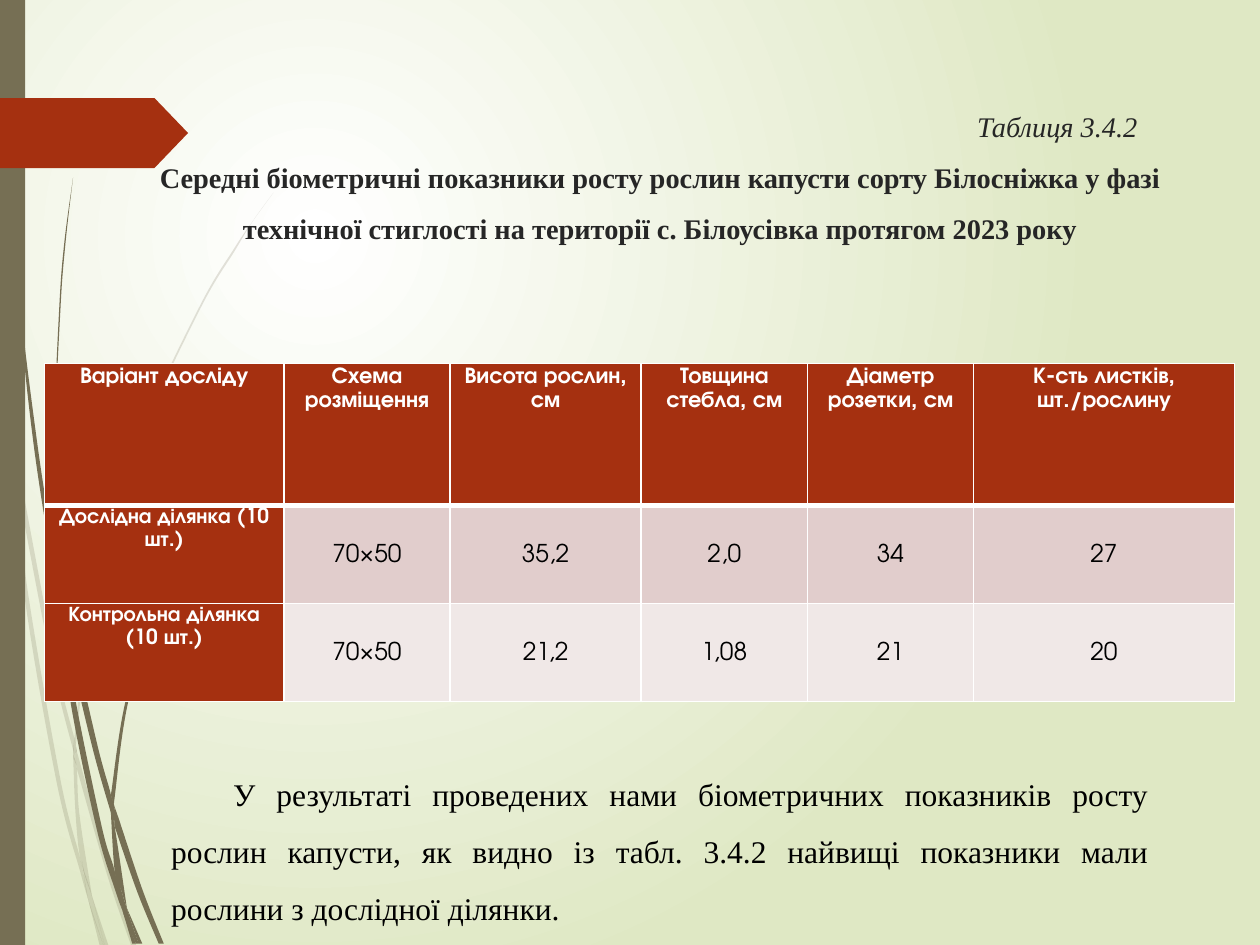
import pptx
import pptx.dml.color
import pptx.enum.lang
import pptx.enum.shapes
import pptx.enum.text
import pptx.oxml
import pptx.oxml.ns
import pptx.util

Pt = pptx.util.Pt
qn = pptx.oxml.ns.qn
ALIGN = pptx.enum.text.PP_ALIGN
ANCHOR = pptx.enum.text.MSO_ANCHOR
AUTO_SIZE = pptx.enum.text.MSO_AUTO_SIZE
SHAPE = pptx.enum.shapes.MSO_SHAPE
UKRAINIAN = pptx.enum.lang.MSO_LANGUAGE_ID.UKRAINIAN
NAMESPACE = pptx.oxml.ns.nsdecls("a")

SERIF, SANS = "Times New Roman", "TeX Gyre Adventor"
OLIVE, RUST, WHITE, BLACK, DARK = "766F54", "A53010", "FFFFFF", "000000", "262626"
GRID = 0.72

PALE_BLADES = [
    ([(0, 282), (6, 322), (8, 350)], [(8, 350), (7, 344), (0, 299)]),
    ([(10, 345), (43, 520), (59, 586)], [(59, 599), (40, 522), (12, 376)]),
    ([(61, 596), (64, 607), (88, 692), (108, 750)], [(104, 750), (85, 694), (61, 610)]),
    ([(73, 711), (86, 750)], [(83, 750), (73, 711)]),
    ([(8, 350), (12, 376), (22, 469), (48, 619), (64, 683), (70, 714)],
     [(70, 714), (64, 693), (45, 621), (19, 470), (8, 350)]),
    ([(58, 599), (60, 646), (64, 683), (73, 711)], [(73, 711), (63, 646), (61, 610), (58, 599)]),
    ([(217, 153), (201, 175), (187, 198), (159, 245), (111, 349), (76, 462), (61, 584), (61, 596)],
     [(59, 586), (75, 461), (110, 348), (158, 244), (186, 197), (201, 175), (217, 153)]),
    ([(70, 714), (82, 750)], [(79, 750), (70, 714)]),
    ([(59, 586), (61, 596), (61, 610)], [(61, 608), (58, 599), (59, 586)]),
    ([(65, 683), (67, 692), (73, 711), (83, 750)], [(82, 750), (70, 714), (65, 683)]),
]
DARK_BLADES = [
    ([(2, 0), (3, 48), (5, 110), (14, 233), (27, 355), (46, 477), (47, 481)],
     [(47, 481), (45, 453), (30, 355), (15, 232), (6, 109), (4, 48), (3, 0)]),
    ([(50, 472), (77, 590), (88, 631), (88, 645)], [(88, 645), (73, 592), (53, 505), (50, 472)]),
    ([(91, 641), (94, 649), (113, 706), (130, 749)], [(126, 749), (109, 708), (91, 656)]),
    ([(47, 477), (53, 505), (60, 556), (81, 657), (91, 691), (97, 722)],
     [(97, 722), (92, 708), (77, 659), (56, 557), (47, 477)]),
    ([(58, 141), (52, 193), (48, 245), (44, 349), (48, 453), (50, 472)],
     [(49, 472), (45, 449), (43, 349), (47, 245), (51, 193), (58, 141)]),
    ([(100, 719), (113, 749)], [(110, 749), (100, 719)]),
    ([(45, 449), (49, 472), (50, 472), (53, 505)], [(47, 477), (45, 453)]),
    ([(216, 344), (203, 359), (191, 374), (169, 406), (131, 476), (103, 552), (91, 633), (91, 641)],
     [(88, 631), (101, 551), (129, 474), (168, 405), (191, 373), (203, 358), (215, 344)]),
    ([(97, 722), (108, 749)], [(105, 749), (97, 722)]),
    ([(88, 645), (91, 656), (100, 716), (100, 719)], [(96, 706), (91, 691), (88, 645)]),
    ([(88, 631), (91, 641), (91, 656)], [(90, 651), (88, 645)]),
    ([(91, 691), (96, 706), (100, 719), (110, 749)], [(108, 749), (97, 722), (91, 691)]),
]

HEADER = ["Варіант досліду", "Схема розміщення", "Висота рослин, см",
          "Товщина стебла, см", "Діаметр розетки, см", "К-сть листків, шт./рослину"]
PLOTS = [
    ["Дослідна ділянка (10 шт.)", "70×50", "35,2", "2,0", "34", "27"],
    ["Контрольна ділянка (10 шт.)", "70×50", "21,2", "1,08", "21", "20"],
]
BAND_FILLS = ["E1CDCC", "F0E8E7"]
COLUMN_WIDTHS = [136.8, 95, 109.2, 95, 95, 149]
ROW_HEIGHTS = [81, 56, 56]


def rgb(value):
    return pptx.dml.color.RGBColor.from_string(value)


def paint(target, color):
    target.fill.solid()
    target.fill.fore_color.rgb = rgb(color)


def finish_shape(shape, color):
    shape.shadow.inherit = False
    shape.line.fill.background()
    paint(shape, color)


def write(para, text, font=SERIF, size=18, color=BLACK, bold=False, italic=False,
          align=ALIGN.CENTER, spacing=1.5, after=10, left=0, indent=0):
    properties = para._p.get_or_add_pPr()
    properties.set("marL", str(Pt(left)))
    properties.set("indent", str(Pt(indent)))
    para.alignment, para.line_spacing = align, spacing
    para.space_before, para.space_after = Pt(0), Pt(after)
    span = para.add_run()
    span.text = text
    span.font.name, span.font.size = font, Pt(size)
    span.font.bold, span.font.italic = bold, italic
    span.font.color.rgb = rgb(color)
    span.font.language_id = UKRAINIAN


def bend_edge(lines, points):
    padded = [points[0], *points, points[-1]]
    for line, a, b, c, d in zip(lines, padded, padded[1:], padded[2:], padded[3:]):
        first = [q + (r - p) / 6 for p, q, r in zip(a, b, c)]
        second = [r - (s - q) / 6 for q, r, s in zip(b, c, d)]
        marks = "".join(f'<a:pt x="{round(x)}" y="{round(y)}"/>' for x, y in (first, second, c))
        line.getparent().replace(line, pptx.oxml.parse_xml(
            f'<a:cubicBezTo {NAMESPACE}>{marks}</a:cubicBezTo>'))


def draw_blades(page, blades, color, opacity=100):
    group = page.shapes.add_group_shape()
    for outer, inner in blades:
        outline = [(Pt(x * GRID), Pt(y * GRID)) for x, y in outer + inner]
        builder = group.shapes.build_freeform(*outline[0])
        builder.add_line_segments(outline[1:], close=True)
        blade = builder.convert_to_shape()
        finish_shape(blade, color)
        points = [(x - blade.left, y - blade.top) for x, y in outline]
        lines = list(blade._element.iter(qn("a:lnTo")))
        turn = len(outer)
        bend_edge(lines[:turn - 1], points[:turn])
        bend_edge(lines[turn:], points[turn:])
        if opacity < 100:
            tone = blade._element.spPr.find(qn("a:solidFill"))[0]
            tone.append(pptx.oxml.parse_xml(f'<a:alpha {NAMESPACE} val="{opacity * 1000}"/>'))


def draw_background(page):
    fill = page.background.fill
    fill.gradient()
    for stop, color in zip(fill.gradient_stops, [WHITE, "DFE8C4"]):
        stop.color.rgb = rgb(color)
    gradient = page._element.find(".//" + qn("a:gradFill"))
    gradient.replace(gradient.find(qn("a:lin")), pptx.oxml.parse_xml(
        f'<a:path {NAMESPACE} path="circle">'
        '<a:fillToRect l="50000" t="50000" r="100000" b="100000"/></a:path>'))


def draw_decor(page):
    draw_blades(page, PALE_BLADES, OLIVE, opacity=20)
    draw_blades(page, DARK_BLADES, OLIVE)
    bar = page.shapes.add_shape(SHAPE.RECTANGLE, 0, 0, Pt(14.4), Pt(540))
    finish_shape(bar, OLIVE)
    arrow = page.shapes.add_shape(SHAPE.PENTAGON, 0, Pt(56), Pt(107.5), Pt(40))
    arrow.adjustments[0] = 0.48
    finish_shape(arrow, RUST)


def place_title(page, left, top, width, height):
    title = page.shapes.title
    title.left, title.top, title.width, title.height = map(Pt, (left, top, width, height))
    page.shapes._spTree.append(title._element)
    frame = title.text_frame
    frame.auto_size = AUTO_SIZE.NONE
    frame.word_wrap, frame.vertical_anchor = True, ANCHOR.TOP
    write(frame.paragraphs[0], "Таблиця 3.4.2", size=16.2, color=DARK, italic=True,
          after=0, left=width * 0.77)
    write(frame.add_paragraph(),
          "Середні біометричні показники росту рослин капусти сорту Білосніжка у фазі "
          "технічної стиглості на території с. Білоусівка протягом 2023 року",
          size=16.2, color=DARK, bold=True)


def set_borders(cell, top, bottom):
    properties = cell._tc.get_or_add_tcPr()
    for side, width in (("L", 1), ("R", 1), ("T", top), ("B", bottom)):
        properties.append(pptx.oxml.parse_xml(
            f'<a:ln{side} {NAMESPACE} w="{Pt(width)}">'
            f'<a:solidFill><a:srgbClr val="{WHITE}"/></a:solidFill></a:ln{side}>'))


def place_table(page, left, top):
    rows = [HEADER, *PLOTS]
    table = page.shapes.add_table(len(rows), len(HEADER), Pt(left), Pt(top),
                                  Pt(sum(COLUMN_WIDTHS)), Pt(sum(ROW_HEIGHTS))).table
    table.first_row = table.horz_banding = False
    for column, width in zip(table.columns, COLUMN_WIDTHS):
        column.width = Pt(width)
    for r, values in enumerate(rows):
        table.rows[r].height = Pt(ROW_HEIGHTS[r])
        for c, value in enumerate(values):
            cell = table.cell(r, c)
            heading = r == 0 or c == 0
            cell.margin_left = cell.margin_right = Pt(5)
            cell.margin_top = cell.margin_bottom = 0
            cell.vertical_anchor = ANCHOR.TOP if heading else ANCHOR.MIDDLE
            set_borders(cell, top=3 if r == 1 else 1, bottom=3 if r == 0 else 1)
            paint(cell, RUST if heading else BAND_FILLS[r - 1])
            write(cell.text_frame.paragraphs[0], value, font=SANS, spacing=1.15, bold=heading,
                  size=13 if r == 0 else 12 if c == 0 else 14,
                  color=WHITE if heading else BLACK)


def place_conclusion(page, left, top, width, height):
    box = page.shapes.add_textbox(*map(Pt, (left, top, width, height)))
    box.text_frame.word_wrap = True
    box.text_frame.auto_size = AUTO_SIZE.SHAPE_TO_FIT_TEXT
    write(box.text_frame.paragraphs[0],
          "У результаті проведених нами біометричних показників росту рослин капусти, "
          "як видно із табл. 3.4.2 найвищі показники мали рослини з дослідної ділянки.",
          align=ALIGN.JUSTIFY, indent=35.4)


def main():
    deck = pptx.Presentation()
    deck.slide_width, deck.slide_height = Pt(720), Pt(540)
    page = deck.slides.add_slide(deck.slide_layouts[5])
    draw_background(page)
    draw_decor(page)
    place_title(page, 82, 49, 590, 96)
    place_table(page, 25.4, 207.8)
    place_conclusion(page, 90.72, 428.7, 572.7, 102.24)
    deck.save("out.pptx")


if __name__ == "__main__":
    main()
